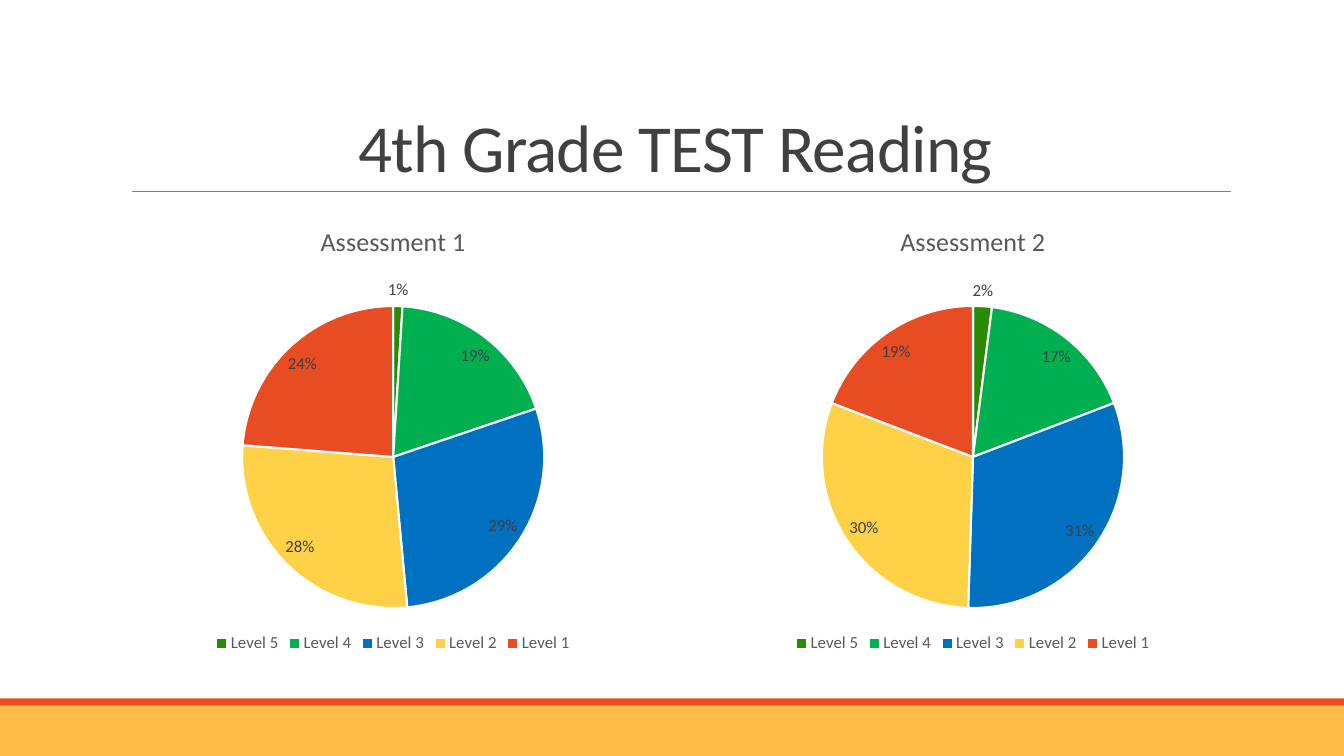
from dataclasses import dataclass

from lxml.etree import SubElement
from pptx import Presentation
from pptx.chart.data import CategoryChartData
from pptx.dml.color import RGBColor
from pptx.enum.chart import XL_CHART_TYPE, XL_LABEL_POSITION, XL_LEGEND_POSITION
from pptx.enum.shapes import MSO_CONNECTOR, MSO_SHAPE
from pptx.enum.text import MSO_ANCHOR, PP_ALIGN
from pptx.oxml.ns import qn
from pptx.util import Inches, Pt


@dataclass(frozen=True)
class Theme:
    font: str = "Calibri"
    title_size: float = 48
    chart_title_size: float = 18.6
    label_size: float = 12
    dark: str = "404040"
    gray: str = "595959"
    rule: str = "808080"
    white: str = "FFFFFF"
    band: str = "FFBD47"
    stripe: str = "E84C22"


THEME = Theme()
PAGE_WIDTH, PAGE_HEIGHT = 13.33, 7.5
LEVEL_COLORS = {
    "Level 5": "2A8A04",
    "Level 4": "00B050",
    "Level 3": "0070C0",
    "Level 2": "FFD147",
    "Level 1": "E84C22",
}
ASSESSMENTS = {
    "Assessment 1": (1, 19, 29, 28, 24),
    "Assessment 2": (2, 17, 31, 30, 19),
}


def set_values(target, values):
    for name, value in values.items():
        setattr(target, name, value)


def style_font(font, size, color):
    set_values(font, {"name": THEME.font, "size": Pt(size), "bold": False})
    font.color.rgb = RGBColor.from_string(color)


def paint(fill, color):
    fill.solid()
    fill.fore_color.rgb = RGBColor.from_string(color)


def add_footer(page, box):
    """Band across the bottom with a thin stripe along its top edge."""
    left, top, width, height = box
    stripe_height = 0.07
    bars = (
        (top + stripe_height, height - stripe_height, THEME.band),
        (top, stripe_height, THEME.stripe),
    )
    for bar_top, bar_height, color in bars:
        bar = page.shapes.add_shape(
            MSO_SHAPE.RECTANGLE,
            *map(Inches, (left, bar_top, width, bar_height)),
        )
        bar.shadow.inherit = False
        paint(bar.fill, color)
        bar.line.fill.background()


def add_title(page, box, text):
    """Bottom-aligned heading with a rule beneath it."""
    left, top, width, height = box
    frame = page.shapes.add_textbox(*map(Inches, box)).text_frame
    set_values(frame, {"word_wrap": True, "vertical_anchor": MSO_ANCHOR.BOTTOM})
    para = frame.paragraphs[0]
    set_values(para, {"alignment": PP_ALIGN.CENTER, "line_spacing": 0.85})
    span = para.add_run()
    span.text = text
    style_font(span.font, THEME.title_size, THEME.dark)
    span.font._element.set("spc", "-50")

    # Rule
    rule_left, rule_top, rule_width = left + 0.11, top + height, width - 0.1
    rule = page.shapes.add_connector(
        MSO_CONNECTOR.STRAIGHT,
        *map(Inches, (rule_left, rule_top, rule_left + rule_width, rule_top)),
    )
    rule.line.width = Pt(0.5)
    rule.line.color.rgb = RGBColor.from_string(THEME.rule)
    SubElement(rule._element.spPr, qn("a:effectLst"))


def add_pie(page, box, name, values):
    """Pie chart of the share of pupils at each level."""
    data = CategoryChartData()
    data.categories = list(LEVEL_COLORS)
    data.add_series(name, values)
    chart = page.shapes.add_chart(
        XL_CHART_TYPE.PIE, *map(Inches, box), data
    ).chart
    style_font(chart.font, THEME.label_size, THEME.gray)

    # Title and legend
    chart.has_title = True
    heading = chart.chart_title.text_frame
    heading.text = name
    style_font(
        heading.paragraphs[0].runs[0].font, THEME.chart_title_size, THEME.gray
    )
    chart.has_legend = True
    set_values(
        chart.legend,
        {"position": XL_LEGEND_POSITION.BOTTOM, "include_in_layout": False},
    )
    style_font(chart.legend.font, THEME.label_size, THEME.gray)

    # Slices
    plot = chart.plots[0]
    plot.vary_by_categories = True
    series = plot.series[0]
    for index, color in enumerate(LEVEL_COLORS.values()):
        slice_format = series.points[index].format
        paint(slice_format.fill, color)
        slice_format.line.width = Pt(1.5)
        slice_format.line.color.rgb = RGBColor.from_string(THEME.white)

    # Percentages
    labels = series.data_labels
    set_values(
        labels,
        {
            "show_percentage": True,
            "show_value": False,
            "number_format": "0%",
            "number_format_is_linked": False,
            "position": XL_LABEL_POSITION.BEST_FIT,
        },
    )
    style_font(labels.font, THEME.label_size, THEME.dark)


def add_chart_row(page, box, assessments):
    """Pies of equal width, side by side."""
    left, top, width, height = box
    gap = 0.35
    pie_width = (width - gap * (len(assessments) - 1)) / len(assessments)
    for index, (name, values) in enumerate(assessments.items()):
        pie_left = left + index * (pie_width + gap)
        add_pie(page, (pie_left, top, pie_width, height), name, values)


def main():
    deck = Presentation()
    set_values(
        deck,
        {"slide_width": Inches(PAGE_WIDTH), "slide_height": Inches(PAGE_HEIGHT)},
    )
    page = deck.slides.add_slide(deck.slide_layouts[6])
    paint(page.background.fill, THEME.white)
    add_footer(page, (0, 6.93, PAGE_WIDTH, 0.57))
    add_title(page, (1.2, 0.31, 11, 1.59), "4th Grade TEST Reading")
    add_chart_row(page, (1.2, 2.02, 11.15, 4.5), ASSESSMENTS)
    deck.save("out.pptx")


if __name__ == "__main__":
    main()
